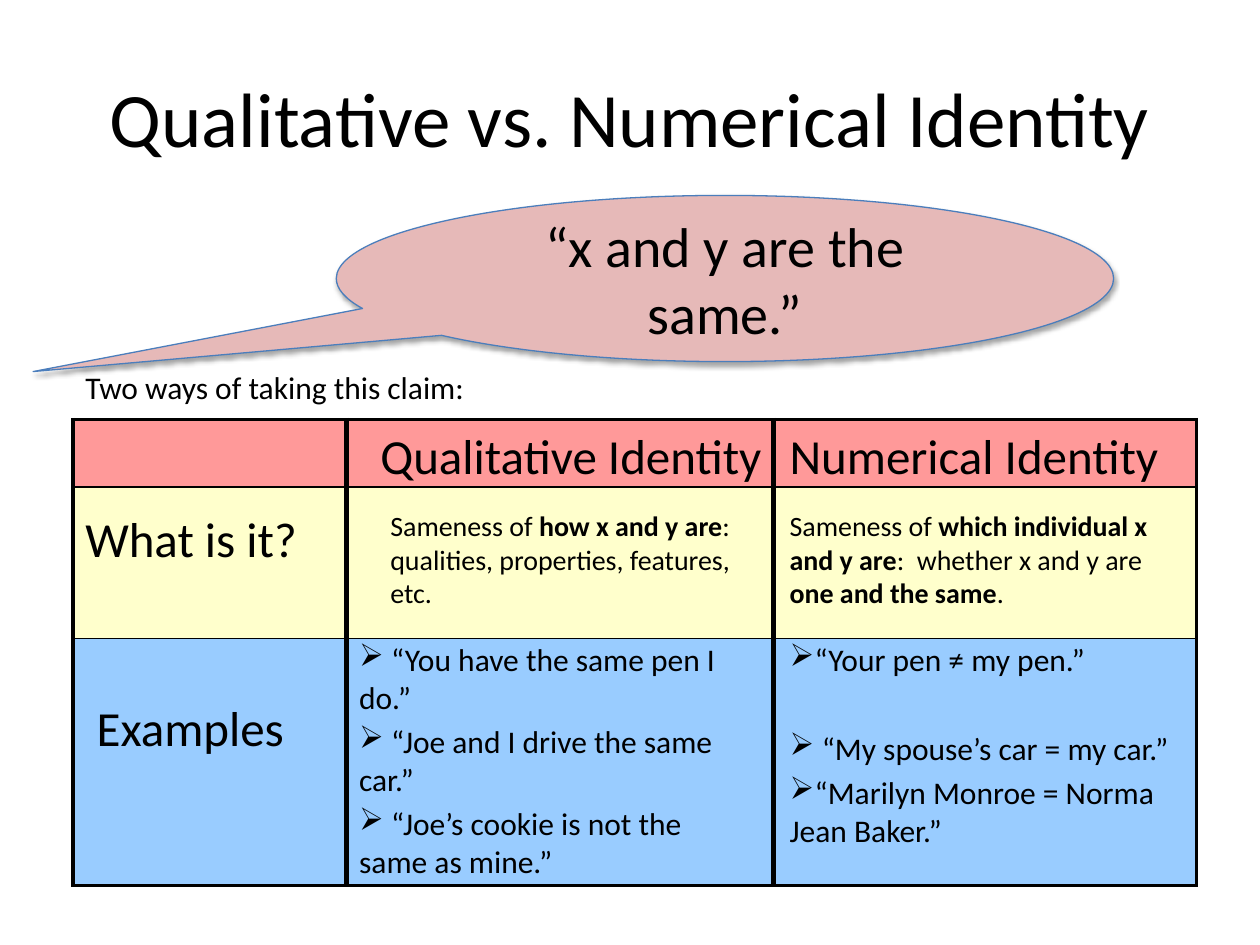
"""Builds a slide contrasting qualitative and numerical identity."""
from lxml import etree
from pptx import Presentation
from pptx import util as u
from pptx.dml.color import RGBColor
from pptx.enum import shapes, text
from pptx.oxml.ns import qn

FONT = "Calibri"
COLORS = {
    "ink": "000000",
    "header": "FF9999",
    "what": "FFFFCC",
    "examples": "99CCFF",
    "callout": "E6B9B8",
    "callout_line": "4B7EBC",
}
COL_WIDTHS = (5.51, 8.61, 8.53)
ROW_HEIGHTS = (1.36, 3.05, 4.98)
ROW_FILLS = ("header", "what", "examples")
OUTER, ROW_RULE, COL_RULE = 2.25, 1, 3

LABELS = [
    ("Qualitative Identity", 7.42, 8.46, 8.26),
    ("Numerical Identity", 15.67, 8.46, 8.46),
    ("What is it?", 1.47, 10.13, 6.15),
    ("Examples", 1.7, 13.94, 5.08),
]
DEFINITIONS = [
    ("Sameness of *how x and y are*: qualities, properties, features, etc.",
     7.62, 7.62),
    ("Sameness of *which individual x and y are*:  whether x and y are "
     "*one and the same*.", 15.67, 8.46),
]
QUALITATIVE_EXAMPLES = [
    " “You have the same pen I do.”",
    " “Joe and I drive the same car.”",
    " “Joe’s cookie is not the same as mine.”",
]
NUMERICAL_EXAMPLES = [
    "“Your pen ≠ my pen.”",
    " “My spouse’s car = my car.”",
    "“Marilyn Monroe = Norma Jean Baker.”",
]


def rgb(name):
    return RGBColor.from_string(COLORS[name])


def box(at):
    return [u.Cm(v) for v in at]


def write(tf, lines, size, align=text.PP_ALIGN.LEFT, before=0, bullet=None,
          anchor=text.MSO_ANCHOR.TOP, wrap=True, grow=False):
    tf.word_wrap = wrap
    tf.vertical_anchor = anchor
    if grow:
        tf.auto_size = text.MSO_AUTO_SIZE.SHAPE_TO_FIT_TEXT
    for i, line in enumerate(lines):
        p = tf.paragraphs[0] if i == 0 else tf.add_paragraph()
        p.alignment = align
        p.space_before = u.Pt(before)
        if bullet:
            mark = etree.SubElement(p._p.get_or_add_pPr(), qn("a:buChar"))
            mark.set("char", bullet)
        for j, part in enumerate(line.split("*")):
            r = p.add_run()
            r.text = part
            r.font.name = FONT
            r.font.size = u.Pt(size)
            r.font.bold = j % 2 == 1
            r.font.color.rgb = rgb("ink")


def add_text(s, at, lines, size, **fmt):
    tf = s.shapes.add_textbox(*box(at)).text_frame
    write(tf, lines, size, **fmt)
    return tf


def add_note(s, at, lines, size, **fmt):
    return add_text(s, at, lines, size, before=size * 0.2, grow=True, **fmt)


def set_borders(cell, widths):
    tc_pr = cell._tc.get_or_add_tcPr()
    for i, (side, width) in enumerate(widths.items()):
        ln = etree.Element(qn(f"a:ln{side}"), w=str(u.Pt(width)))
        fill = etree.SubElement(ln, qn("a:solidFill"))
        etree.SubElement(fill, qn("a:srgbClr"), val=COLORS["ink"])
        tc_pr.insert(i, ln)


def add_grid(s, left, top):
    rows, cols = len(ROW_HEIGHTS), len(COL_WIDTHS)
    at = (left, top, sum(COL_WIDTHS), sum(ROW_HEIGHTS))
    table = s.shapes.add_table(rows, cols, *box(at)).table
    for col, width in zip(table.columns, COL_WIDTHS):
        col.width = u.Cm(width)
    for i, height in enumerate(ROW_HEIGHTS):
        table.rows[i].height = u.Cm(height)
        for j in range(cols):
            cell = table.cell(i, j)
            cell.fill.solid()
            cell.fill.fore_color.rgb = rgb(ROW_FILLS[i])
            set_borders(cell, {
                "L": COL_RULE if j else OUTER,
                "R": COL_RULE if j < cols - 1 else OUTER,
                "T": ROW_RULE if i else OUTER,
                "B": ROW_RULE if i < rows - 1 else OUTER,
            })


def add_shadow(sp, blur, dist, angle, alpha):
    sp.shadow.inherit = False
    effects = sp._element.spPr.find(qn("a:effectLst"))
    shadow = etree.SubElement(
        effects, qn("a:outerShdw"), blurRad=str(u.Pt(blur)),
        dist=str(u.Pt(dist)), dir=str(angle * 60000), rotWithShape="0")
    color = etree.SubElement(shadow, qn("a:srgbClr"), val=COLORS["ink"])
    etree.SubElement(color, qn("a:alpha"), val=str(alpha * 1000))


def add_callout(s, at, line, size):
    sp = s.shapes.add_shape(shapes.MSO_SHAPE.OVAL_CALLOUT, *box(at))
    sp.adjustments[0], sp.adjustments[1] = -0.89, 0.56
    sp.fill.solid()
    sp.fill.fore_color.rgb = rgb("callout")
    sp.line.color.rgb = rgb("callout_line")
    sp.line.width = u.Pt(0.75)
    add_shadow(sp, blur=3.1, dist=1.8, angle=90, alpha=35)
    write(sp.text_frame, [line], size, align=text.PP_ALIGN.CENTER,
          anchor=text.MSO_ANCHOR.MIDDLE)


def main():
    prs = Presentation()
    prs.slide_width, prs.slide_height = u.Cm(25.4), u.Cm(19.05)
    s = prs.slides.add_slide(prs.slide_layouts[6])

    add_text(s, (1.27, 0.76, 22.86, 3.18),
             ["Qualitative vs. Numerical Identity"], 44,
             align=text.PP_ALIGN.CENTER, anchor=text.MSO_ANCHOR.MIDDLE)
    add_grid(s, 1.47, 8.46)
    for label, left, top, width in LABELS:
        add_note(s, (left, top, width, 1.45), [label], 28)
    for definition, left, width in DEFINITIONS:
        add_note(s, (left, 10.13, width, 2.31), [definition], 16)
    numerical = add_note(s, (15.67, 12.78, 8.46, 4.57), NUMERICAL_EXAMPLES,
                         18, bullet="➢")
    numerical.paragraphs[1].space_before = u.Pt(29)
    add_note(s, (6.99, 12.78, 8.26, 5.18), QUALITATIVE_EXAMPLES, 18,
             bullet="➢")
    add_text(s, (1.47, 7.29, 8.23, 1.02), ["Two ways of taking this claim:"],
             18, wrap=False, grow=True)
    add_callout(s, (6.78, 3.94, 15.67, 3.35), "“x and y are the same.”", 32)

    prs.save("out.pptx")


if __name__ == "__main__":
    main()
